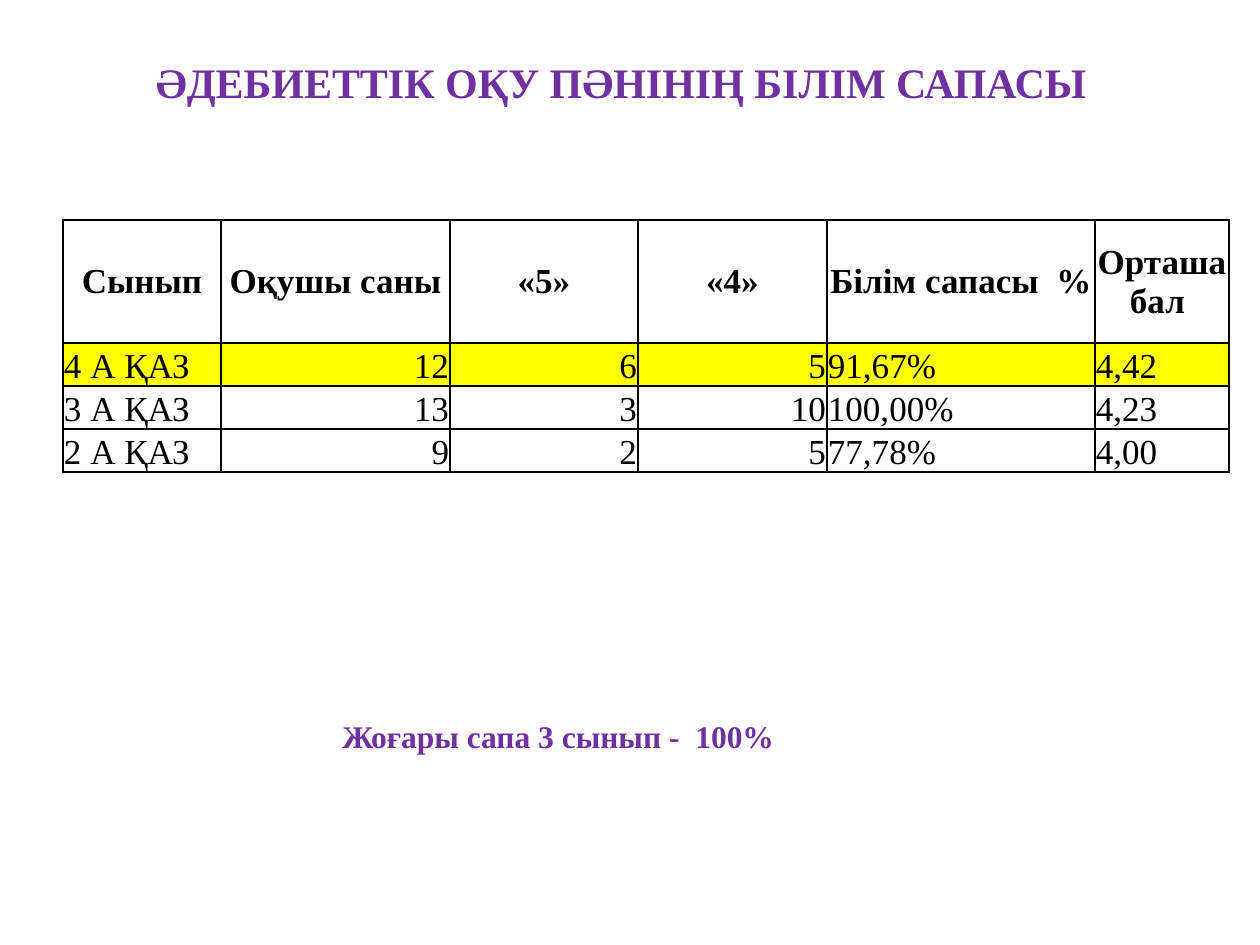
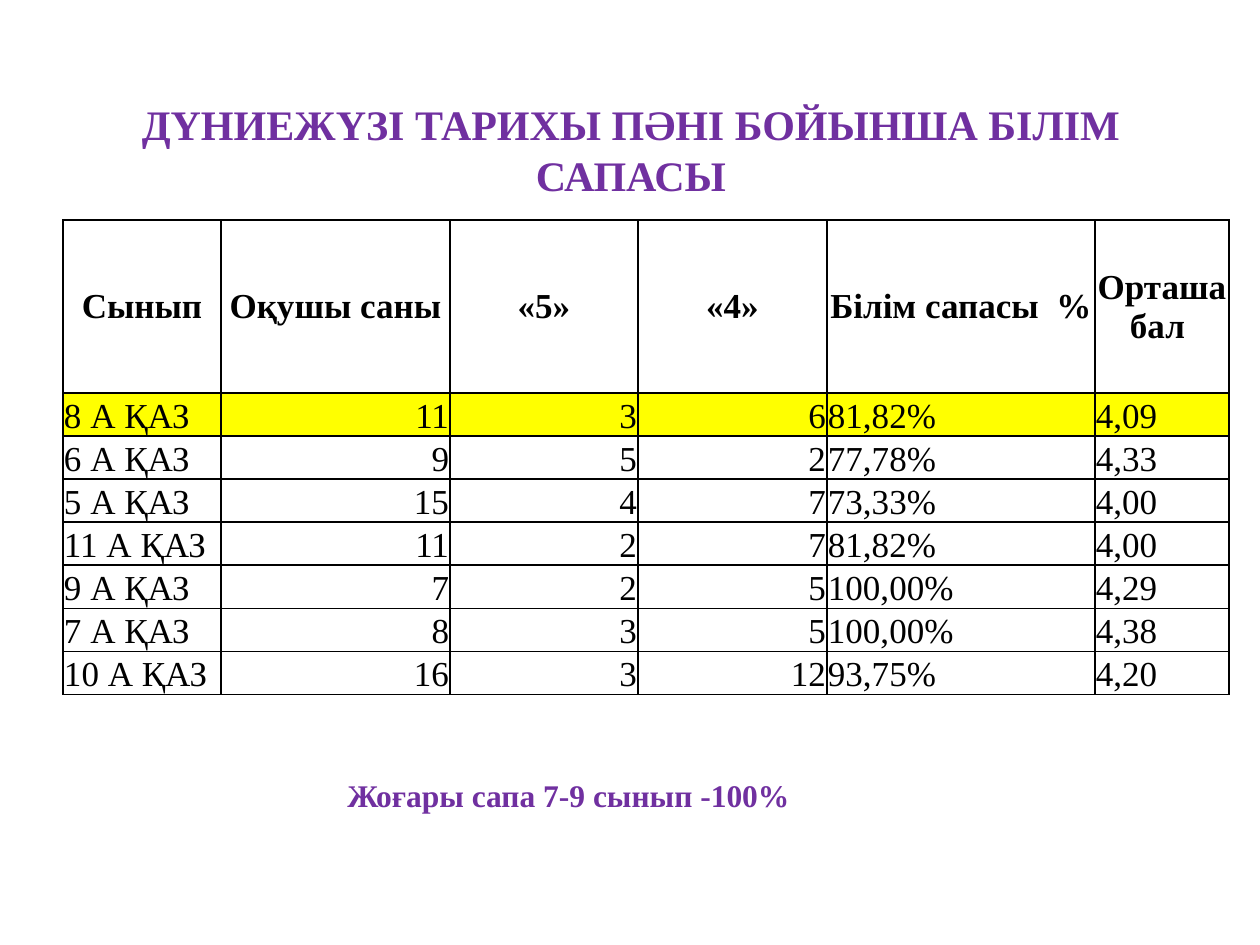
import dataclasses

import lxml.etree
import pptx
import pptx.dml.color
import pptx.enum.text
import pptx.oxml.ns
import pptx.util

ALIGN = pptx.enum.text.PP_ALIGN
ANCHOR = pptx.enum.text.MSO_ANCHOR
AUTO_SIZE = pptx.enum.text.MSO_AUTO_SIZE
EMU_PER_INCH = 914400
PX_PER_INCH = 126


@dataclasses.dataclass(frozen=True)
class Theme:
    font: str = "Times New Roman"
    accent: str = "7030A0"
    ink: str = "000000"
    paper: str = "FFFFFF"
    highlight: str = "FFFF00"
    title_size: int = 24
    note_size: int = 18
    table_size: int = 20
    border_points: int = 1


def px(length):
    return pptx.util.Emu(round(length * EMU_PER_INCH / PX_PER_INCH))


def rgb(color):
    return pptx.dml.color.RGBColor.from_string(color)


class GradeDeck:
    HEADERS = ("Сынып", "Оқушы саны", "«5»", "«4»", "Білім сапасы  %", "Орташа бал ")
    COLUMN_WIDTHS = (158, 229, 188, 189, 268, 134)
    COUNT_COLUMNS = (1, 2, 3)
    TABLE_LEFT, TABLE_TOP = 63, 220
    ROW_HEIGHT = 43

    def __init__(self, theme):
        self.theme = theme
        self.presentation = pptx.Presentation()
        self.presentation.slide_width = px(1260)
        self.presentation.slide_height = px(945)
        self.slide = None

    def add_slide(self):
        layout = self.presentation.slide_layouts.get_by_name("Title Only")
        self.slide = self.presentation.slides.add_slide(layout)
        fill = self.slide.background.fill
        fill.solid()
        fill.fore_color.rgb = rgb(self.theme.paper)

    def set_text(self, text_frame, text, size, color, bold, align):
        text_frame.text = text
        paragraph = text_frame.paragraphs[0]
        paragraph.alignment = align
        for run in paragraph.runs:
            run.font.name = self.theme.font
            run.font.size = pptx.util.Pt(size)
            run.font.bold = bold
            run.font.color.rgb = rgb(color)

    def title(self, text, left, top):
        shape = self.slide.shapes.title
        shape.left, shape.top = px(left), px(top)
        shape.width, shape.height = px(1134), px(86)
        text_frame = shape.text_frame
        text_frame.word_wrap = True
        text_frame.auto_size = AUTO_SIZE.NONE
        text_frame.vertical_anchor = ANCHOR.MIDDLE
        self.set_text(text_frame, text, self.theme.title_size, self.theme.accent, True, ALIGN.CENTER)

    def note(self, text, left, top):
        shape = self.slide.shapes.add_textbox(px(left), px(top), px(630), px(50))
        text_frame = shape.text_frame
        text_frame.word_wrap = True
        text_frame.auto_size = AUTO_SIZE.SHAPE_TO_FIT_TEXT
        self.set_text(text_frame, text, self.theme.note_size, self.theme.accent, True, ALIGN.LEFT)

    def table(self, records, header_height):
        rows = [self.HEADERS, *records]
        height = header_height + self.ROW_HEIGHT * len(records)
        frame = self.slide.shapes.add_table(
            len(rows), len(self.HEADERS), px(self.TABLE_LEFT), px(self.TABLE_TOP),
            px(sum(self.COLUMN_WIDTHS)), px(height))
        table = frame.table
        table.first_row = False
        table.horz_banding = False
        for column, width in zip(table.columns, self.COLUMN_WIDTHS):
            column.width = px(width)
        for row_index, values in enumerate(rows):
            table.rows[row_index].height = px(self.ROW_HEIGHT if row_index else header_height)
            for column_index, value in enumerate(values):
                self.cell(table.cell(row_index, column_index), value, row_index, column_index)

    def cell(self, cell, value, row_index, column_index):
        is_header = row_index == 0
        if is_header:
            align = ALIGN.CENTER
        else:
            align = ALIGN.RIGHT if column_index in self.COUNT_COLUMNS else ALIGN.LEFT
        cell.margin_left = cell.margin_right = cell.margin_top = px(1)
        cell.margin_bottom = 0
        cell.vertical_anchor = ANCHOR.MIDDLE if is_header else ANCHOR.BOTTOM
        self.set_text(cell.text_frame, str(value), self.theme.table_size,
                      self.theme.ink, is_header, align)
        self.borders(cell)
        cell.fill.solid()
        cell.fill.fore_color.rgb = rgb(
            self.theme.highlight if row_index == 1 else self.theme.paper)

    def borders(self, cell):
        qualified = pptx.oxml.ns.qn
        properties = cell._tc.get_or_add_tcPr()
        for side in ("lnL", "lnR", "lnT", "lnB"):
            line = lxml.etree.SubElement(properties, qualified(f"a:{side}"))
            line.set("w", str(pptx.util.Pt(self.theme.border_points)))
            fill = lxml.etree.SubElement(line, qualified("a:solidFill"))
            lxml.etree.SubElement(fill, qualified("a:srgbClr")).set("val", self.theme.ink)


def main():
    deck = GradeDeck(Theme())

    deck.add_slide()
    deck.title(" ӘДЕБИЕТТІК ОҚУ ПӘНІНІҢ БІЛІМ САПАСЫ", 49, 39)
    deck.note("Жоғары сапа 3 сынып -  100%", 330, 711)
    deck.table([
        ("4 А ҚАЗ", 12, 6, 5, "91,67%", "4,42"),
        ("3 А ҚАЗ", 13, 3, 10, "100,00%", "4,23"),
        ("2 А ҚАЗ", 9, 2, 5, "77,78%", "4,00"),
    ], header_height=123)

    deck.add_slide()
    deck.title("ДҮНИЕЖҮЗІ ТАРИХЫ ПӘНІ БОЙЫНША БІЛІМ САПАСЫ", 64, 106)
    deck.note("Жоғары сапа 7-9 сынып -100%", 335, 770)
    deck.table([
        ("8 А ҚАЗ", 11, 3, 6, "81,82%", "4,09"),
        ("6 А ҚАЗ", 9, 5, 2, "77,78%", "4,33"),
        ("5 А ҚАЗ", 15, 4, 7, "73,33%", "4,00"),
        ("11 А ҚАЗ", 11, 2, 7, "81,82%", "4,00"),
        ("9 А ҚАЗ", 7, 2, 5, "100,00%", "4,29"),
        ("7 А ҚАЗ", 8, 3, 5, "100,00%", "4,38"),
        ("10 А ҚАЗ", 16, 3, 12, "93,75%", "4,20"),
    ], header_height=173)

    deck.presentation.save("out.pptx")


if __name__ == "__main__":
    main()
